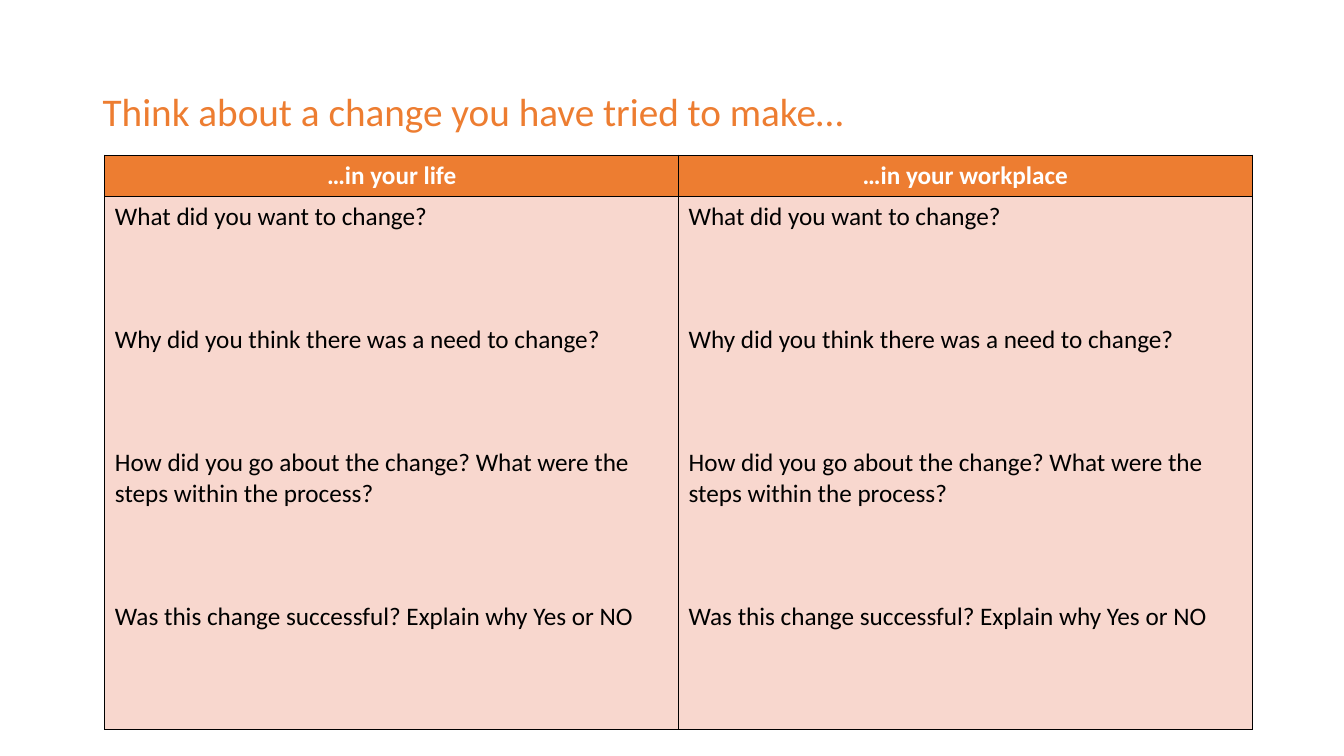
"""Builds the slide that compares a change in life with one in the workplace."""
from dataclasses import dataclass

from lxml.etree import SubElement
from pptx import Presentation
from pptx.dml.color import RGBColor as Rgb
from pptx.enum.text import MSO_ANCHOR as Anchor, PP_ALIGN as Align
from pptx.oxml.ns import qn
from pptx.util import Inches, Pt

TITLE = "Think about a change you have tried to make…"
SETTINGS = ["…in your life", "…in your workplace"]
QUESTIONS = [
    "What did you want to change?",
    "Why did you think there was a need to change?",
    "How did you go about the change? What were the steps within the process?",
    "Was this change successful? Explain why Yes or NO",
]

TITLE_BOX = (0.92, 0.4, 11.5, 1.45)
GRID_LEFT, GRID_TOP = 1.04, 1.54
COLUMN_WIDTH = 5.69
ROW_HEIGHTS = (0.41, 5.29)


@dataclass(frozen=True)
class Theme:
    """Colours, font and sizes of the slide."""
    font: str = "Calibri"
    accent: str = "ED7D31"
    tint: str = "F8D7CE"
    ink: str = "000000"
    paper: str = "FFFFFF"
    title_size: float = 28
    body_size: float = 18
    answer_gap: float = 66
    border: float = 1


THEME = Theme()


def write(frame, lines, *, color, size=THEME.body_size, bold=False,
          align=Align.LEFT, gap=0, spacing=1.0):
    """Write one paragraph per line, with a gap before all but the first."""
    frame.word_wrap = True
    for index, line in enumerate(lines):
        paragraph = frame.add_paragraph() if index else frame.paragraphs[0]
        paragraph.alignment = align
        paragraph.line_spacing = spacing
        paragraph.space_before = Pt(gap if index else 0)
        run = paragraph.add_run()
        run.text = line
        run.font.name = THEME.font
        run.font.size = Pt(size)
        run.font.bold = bold
        run.font.color.rgb = Rgb.from_string(color)


def paint(cell, fill):
    """Give a cell its borders and fill."""
    properties = cell._tc.get_or_add_tcPr()
    for side in ("a:lnL", "a:lnR", "a:lnT", "a:lnB"):
        edge = SubElement(properties, qn(side), w=str(Pt(THEME.border)))
        solid = SubElement(edge, qn("a:solidFill"))
        SubElement(solid, qn("a:srgbClr"), val=THEME.ink)
    cell.fill.solid()
    cell.fill.fore_color.rgb = Rgb.from_string(fill)


def main():
    """Build and save the slide."""
    deck = Presentation()
    deck.slide_width, deck.slide_height = Inches(13.33), Inches(7.5)
    slide = deck.slides.add_slide(deck.slide_layouts[6])

    title = slide.shapes.add_textbox(*map(Inches, TITLE_BOX)).text_frame
    title.vertical_anchor = Anchor.MIDDLE
    write(title, [TITLE], color=THEME.accent, size=THEME.title_size, spacing=0.9)

    grid = slide.shapes.add_table(
        len(ROW_HEIGHTS), len(SETTINGS), Inches(GRID_LEFT), Inches(GRID_TOP),
        Inches(COLUMN_WIDTH * len(SETTINGS)), Inches(sum(ROW_HEIGHTS))).table
    grid.first_row = grid.horz_banding = False
    for row, height in zip(grid.rows, ROW_HEIGHTS):
        row.height = Inches(height)
    for index, setting in enumerate(SETTINGS):
        grid.columns[index].width = Inches(COLUMN_WIDTH)
        heading, answers = grid.cell(0, index), grid.cell(1, index)
        paint(heading, THEME.accent)
        paint(answers, THEME.tint)
        write(heading.text_frame, [setting], color=THEME.paper, bold=True,
              align=Align.CENTER)
        write(answers.text_frame, QUESTIONS, color=THEME.ink, gap=THEME.answer_gap)

    deck.save("out.pptx")


if __name__ == "__main__":
    main()
